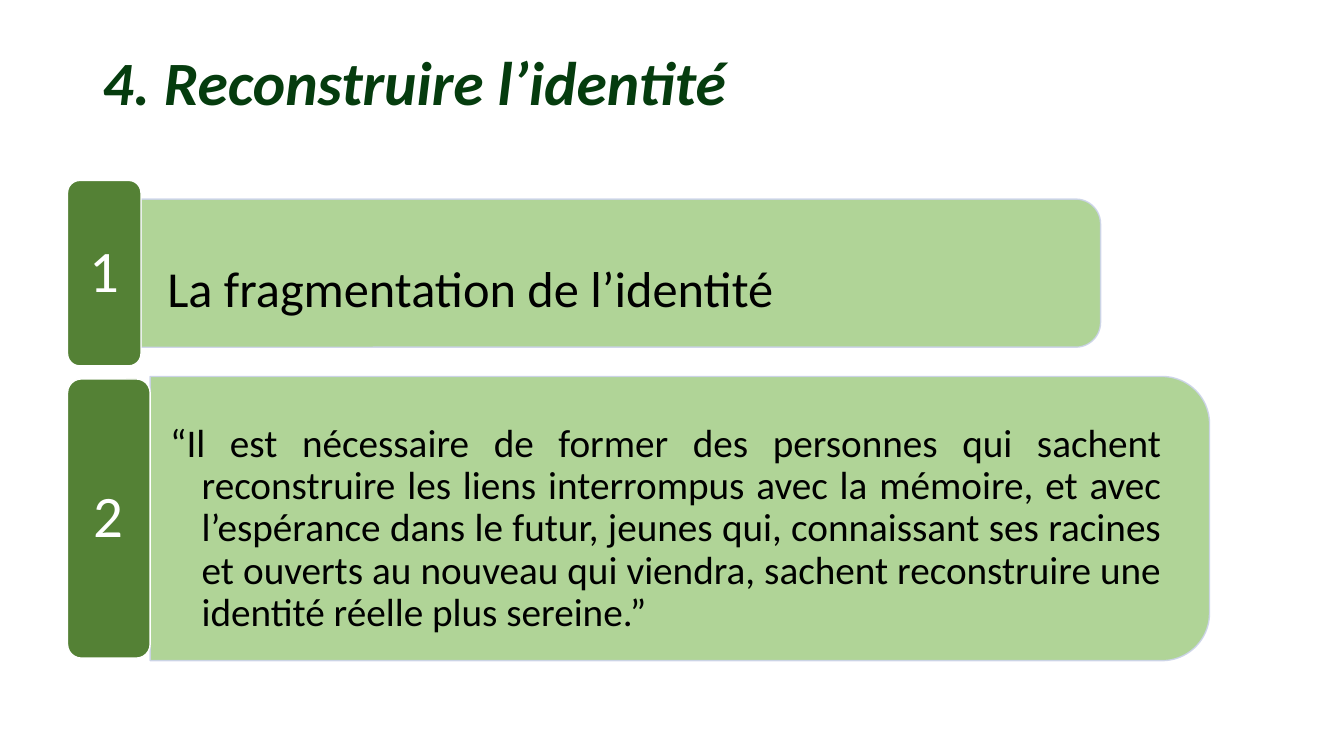
from dataclasses import dataclass

from lxml import etree
from pptx import Presentation
from pptx.dml.color import RGBColor
from pptx.enum.shapes import MSO_SHAPE
from pptx.enum.text import MSO_ANCHOR, MSO_AUTO_SIZE, PP_ALIGN
from pptx.oxml.ns import qn
from pptx.shapes.autoshape import Shape
from pptx.slide import Slide
from pptx.text.text import _Paragraph
from pptx.util import Pt

ROUND = MSO_SHAPE.ROUNDED_RECTANGLE
HALF = MSO_SHAPE.ROUND_2_SAME_RECTANGLE
TOP, MIDDLE = MSO_ANCHOR.TOP, MSO_ANCHOR.MIDDLE
LEFT, CENTER, JUSTIFY = PP_ALIGN.LEFT, PP_ALIGN.CENTER, PP_ALIGN.JUSTIFY
NO_FIT = MSO_AUTO_SIZE.NONE


@dataclass(frozen=True)
class Theme:
    font: str = "Calibri"
    title: str = "053C0E"
    tab: str = "548135"
    panel: str = "A8D08C"
    edge: str = "CCD3EA"
    ink: str = "000000"
    white: str = "FFFFFF"
    head_size: float = 44
    tab_size: float = 42
    alpha: int = 90
    round: float = 0.167


@dataclass(frozen=True)
class Box:
    left: float
    top: float
    width: float
    height: float

    @property
    def right(self) -> float:
        return self.left + self.width

    @property
    def middle(self) -> float:
        return self.top + self.height / 2


@dataclass(frozen=True)
class Row:
    label: str
    text: str
    size: float
    align: PP_ALIGN
    tab: Box
    width: float
    height: float
    frame: Box


THEME = Theme()
TAB_LEFT = 48.24
HANG = 22.5
ROWS = (
    Row("1", "La fragmentation de l’identité", 36, LEFT,
        Box(TAB_LEFT, 128.9, 52.5, 132.5), 685.4, 105.8,
        Box(100.1, 160.1, 680.4, 95.8)),
    Row("2", "“Il est nécessaire de former des personnes qui sachent "
        "reconstruire les liens interrompus avec la mémoire, et avec "
        "l’espérance dans le futur, jeunes qui, connaissant ses racines "
        "et ouverts au nouveau qui viendra, sachent reconstruire une "
        "identité réelle plus sereine.”", 28, JUSTIFY,
        Box(TAB_LEFT, 270.7, 59, 199.4), 756.7, 203,
        Box(102.2, 286.1, 746.6, 183.6)),
)


def color(code: str) -> RGBColor:
    return RGBColor.from_string(code)


def spot(box: Box) -> tuple[Pt, Pt, Pt, Pt]:
    return Pt(box.left), Pt(box.top), Pt(box.width), Pt(box.height)


def write(shape: Shape, text: str, size: float, ink: str, align: PP_ALIGN,
          anchor: MSO_ANCHOR, side: float, edge: float) -> _Paragraph:
    frame = shape.text_frame
    frame.auto_size = NO_FIT
    frame.word_wrap = True
    frame.vertical_anchor = anchor
    frame.margin_left = frame.margin_right = Pt(side)
    frame.margin_top = frame.margin_bottom = Pt(edge)
    frame.text = text
    para = frame.paragraphs[0]
    para.alignment = align
    para.line_spacing = 0.9
    para.space_before = Pt(0)
    para.font.name = THEME.font
    para.font.size = Pt(size)
    para.font.color.rgb = color(ink)
    return para


def block(slide: Slide, kind: MSO_SHAPE, box: Box, fill: str, line: str) -> Shape:
    shape = slide.shapes.add_shape(kind, *spot(box))
    shape.shadow.inherit = False
    shape.adjustments[0] = THEME.round
    shape.fill.solid()
    shape.fill.fore_color.rgb = color(fill)
    shape.line.color.rgb = color(line)
    shape.line.width = Pt(1)
    return shape


def fade(shape: Shape) -> None:
    for tone in shape._element.spPr.iter(qn("a:srgbClr")):
        etree.SubElement(tone, qn("a:alpha"), val=str(THEME.alpha * 1000))


def draw_panel(slide: Slide, row: Row) -> None:
    mid = row.tab.right + row.width / 2
    box = Box(mid - row.height / 2, row.tab.middle - row.width / 2,
              row.height, row.width)
    panel = block(slide, HALF, box, THEME.panel, THEME.edge)
    panel.adjustments[1] = 0
    panel.rotation = 90
    fade(panel)


def draw_row(slide: Slide, row: Row) -> None:
    draw_panel(slide, row)
    note = slide.shapes.add_textbox(*spot(row.frame))
    para = write(note, row.text, row.size, THEME.ink, row.align, MIDDLE, 19.4, 10)
    props = para._p.get_or_add_pPr()
    props.set("marL", str(Pt(HANG)))
    props.set("indent", str(-Pt(HANG)))
    tab = block(slide, ROUND, row.tab, THEME.tab, THEME.white)
    write(tab, row.label, THEME.tab_size, THEME.white, CENTER, MIDDLE, 12, 6)


def draw_title(slide: Slide) -> None:
    title = slide.shapes.title
    title.left, title.top, title.width, title.height = spot(Box(66, 34, 828, 104.4))
    para = write(title, "4. Reconstruire l’identité", THEME.head_size,
                 THEME.title, LEFT, TOP, 7.2, 3.6)
    para.font.bold = True
    para.font.italic = True


def main() -> None:
    deck = Presentation()
    deck.slide_width, deck.slide_height = Pt(960), Pt(540)
    slide = deck.slides.add_slide(deck.slide_layouts[5])
    draw_title(slide)
    for row in ROWS:
        draw_row(slide, row)
    deck.save("out.pptx")


if __name__ == "__main__":
    main()
